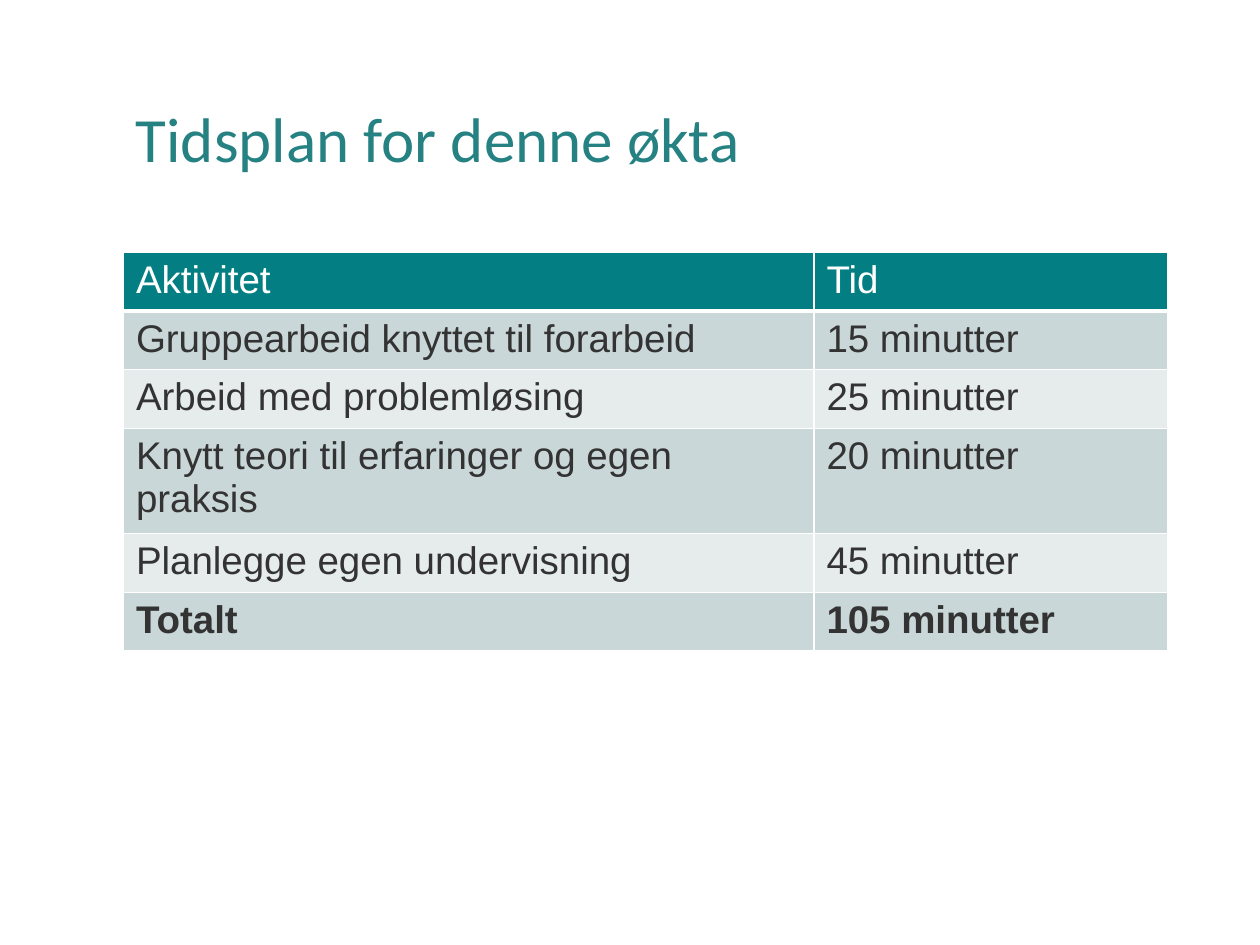
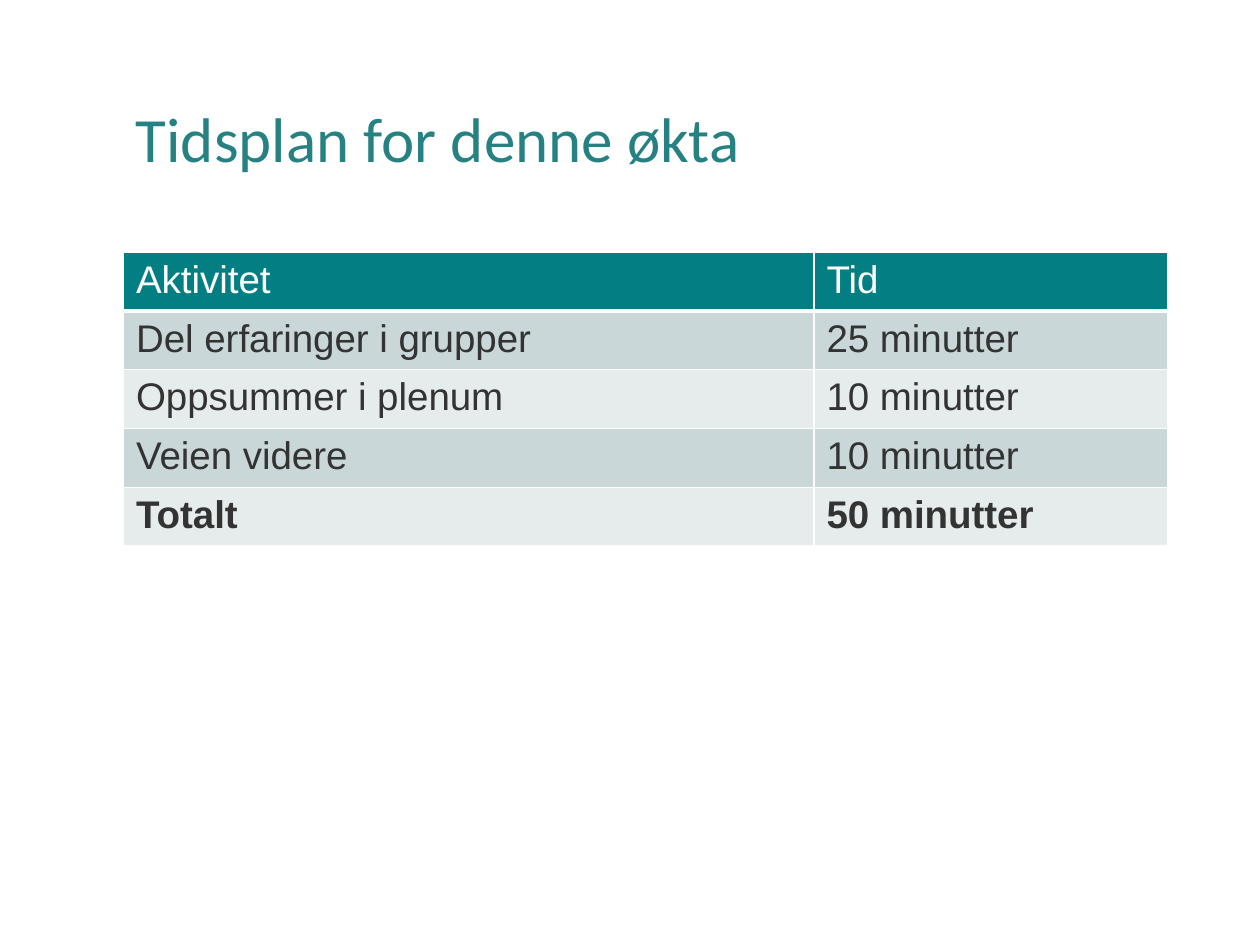
from dataclasses import dataclass

from lxml import etree
from pptx import Presentation
from pptx.dml.color import RGBColor
from pptx.enum.text import MSO_ANCHOR
from pptx.oxml.ns import qn
from pptx.util import Inches, Pt

MIDDLE = MSO_ANCHOR.MIDDLE


@dataclass(frozen=True)
class Theme:
    """Colours, fonts and type sizes shared by the slides."""
    title: str = "268183"
    head: str = "037F83"
    bands: tuple = ("CAD7D8", "E6ECEC")
    ink: str = "333333"
    white: str = "FFFFFF"
    title_font: str = "Calibri"
    body_font: str = "Arial"
    title_size: int = 36
    body_size: int = 22
    thin: int = 1
    thick: int = 3


THEME = Theme()
LEFT, WIDTH = 0.98, 8.29
COLS = (5.48, 2.81)
ROW = 0.41
TITLE = "Tidsplan for denne økta"
HEAD = ("Aktivitet", "Tid")
PLANS = (
    (
        ("Gruppearbeid knyttet til forarbeid", "15 minutter"),
        ("Arbeid med problemløsing", "25 minutter"),
        ("Knytt teori til erfaringer og egen praksis", "20 minutter"),
        ("Planlegge egen undervisning", "45 minutter"),
        ("Totalt", "105 minutter"),
    ),
    (
        ("Del erfaringer i grupper", "25 minutter"),
        ("Oppsummer i plenum", "10 minutter"),
        ("Veien videre", "10 minutter"),
        ("Totalt", "50 minutter"),
    ),
)


def set_font(para, color, **values):
    """Apply a colour and font values to a paragraph's runs."""
    for run in para.runs:
        run.font.color.rgb = RGBColor.from_string(color)
        for name, value in values.items():
            setattr(run.font, name, value)


def add_title(slide, text):
    """Add the slide title."""
    box = slide.shapes.add_textbox(
        Inches(LEFT), Inches(0.4), Inches(WIDTH), Inches(1.45))
    frame = box.text_frame
    frame.word_wrap = True
    frame.vertical_anchor = MIDDLE
    para = frame.paragraphs[0]
    para.text = text
    para.line_spacing = 0.9
    set_font(para, THEME.title, name=THEME.title_font,
             size=Pt(THEME.title_size))


def set_edges(cell, top, bottom):
    """Draw white borders round a cell, with its top and bottom widths."""
    props = cell._tc.get_or_add_tcPr()
    widths = {"L": THEME.thin, "R": THEME.thin, "T": top, "B": bottom}
    for side, width in widths.items():
        line = etree.SubElement(props, qn(f"a:ln{side}"), w=str(Pt(width)))
        fill = etree.SubElement(line, qn("a:solidFill"))
        etree.SubElement(fill, qn("a:srgbClr"), val=THEME.white)


def fill_cell(cell, text, row, last):
    """Write and style one cell by its row number."""
    thin, thick = THEME.thin, THEME.thick
    set_edges(cell, thick if row == 1 else thin, thick if row == 0 else thin)
    fill = THEME.bands[(row - 1) % 2] if row else THEME.head
    cell.fill.solid()
    cell.fill.fore_color.rgb = RGBColor.from_string(fill)
    cell.text = text
    set_font(cell.text_frame.paragraphs[0], THEME.ink if row else THEME.white,
             name=THEME.body_font, size=Pt(THEME.body_size), bold=row == last)


def add_plan(slide, plan):
    """Add the timetable with its header row."""
    rows = (HEAD, *plan)
    table = slide.shapes.add_table(
        len(rows), len(COLS), Inches(LEFT), Inches(2), Inches(WIDTH),
        Inches(ROW * len(rows))).table
    for col, width in zip(table.columns, COLS):
        col.width = Inches(width)
    for row, texts in enumerate(rows):
        table.rows[row].height = Inches(ROW)
        for col, text in enumerate(texts):
            fill_cell(table.cell(row, col), text, row, len(plan))


def main():
    """Build and save the slides."""
    deck = Presentation()
    deck.slide_width, deck.slide_height = Inches(10), Inches(7.5)
    for plan in PLANS:
        slide = deck.slides.add_slide(deck.slide_layouts[6])
        add_title(slide, TITLE)
        add_plan(slide, plan)
    deck.save("out.pptx")


if __name__ == "__main__":
    main()
